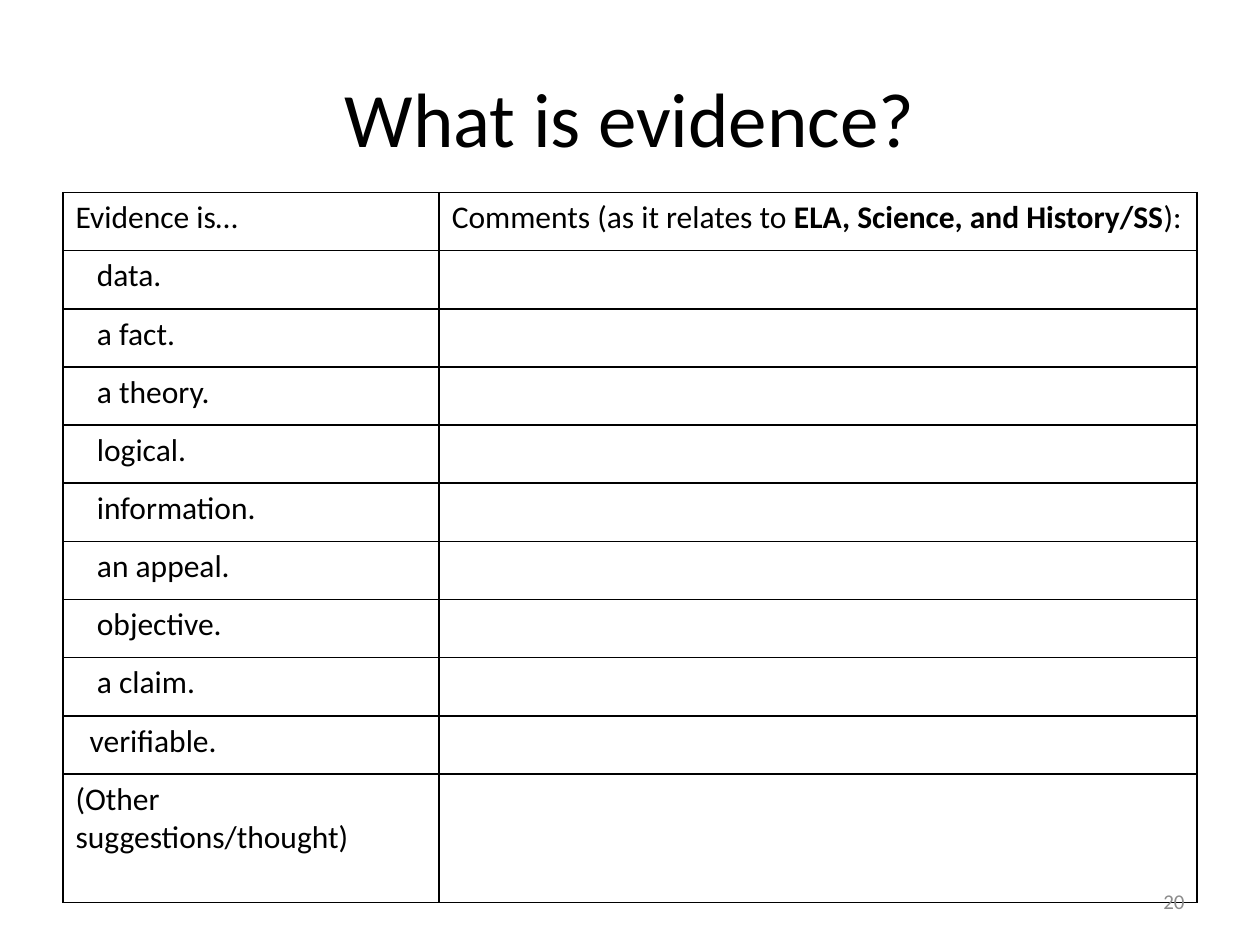
import dataclasses
import lxml.etree
import pptx
import pptx.dml.color
import pptx.enum.text
import pptx.oxml.ns
import pptx.util

Pt = pptx.util.Pt
ALIGN = pptx.enum.text.PP_ALIGN
MIDDLE = pptx.enum.text.MSO_ANCHOR.MIDDLE


@dataclasses.dataclass(frozen=True)
class Theme:
    font: str = "Calibri"
    ink: str = "000000"
    paper: str = "FFFFFF"
    muted: str = "8C8C8C"
    title: int = 44
    body: int = 18
    number: int = 12
    border: int = 1


THEME = Theme()
HEADER = [("Comments (as it relates to ", False),
          ("ELA, Science, and History/SS", True), ("):", False)]
ITEMS = ["data.", "a fact.", "a theory.", "logical.", "information.",
         "an appeal.", "objective.", "a claim.", "verifiable."]
LABELS = ["Evidence is…", *ITEMS, "(Other suggestions/thought)"]
MARGIN, ITEM_INDENT, LAST_INDENT = 7.2, 12.2, 8.1


def rgb(color):
    return pptx.dml.color.RGBColor.from_string(color)


def style(r, size, color=THEME.ink, bold=False):
    r.font.name = THEME.font
    r.font.size = Pt(size)
    r.font.bold = bold
    r.font.color.rgb = rgb(color)


def add_border(cell):
    tcPr = cell._tc.get_or_add_tcPr()
    qn = pptx.oxml.ns.qn
    for i, side in enumerate(("lnL", "lnR", "lnT", "lnB")):
        ln = lxml.etree.Element(qn(f"a:{side}"), w=str(Pt(THEME.border)))
        fill = lxml.etree.SubElement(ln, qn("a:solidFill"))
        lxml.etree.SubElement(fill, qn("a:srgbClr"), val=THEME.ink)
        tcPr.insert(i, ln)


def place_text(sp, box, text, size, color, align):
    sp.left, sp.top, sp.width, sp.height = map(Pt, box)
    tf = sp.text_frame
    tf.text = text
    tf.word_wrap = True
    tf.vertical_anchor = MIDDLE
    p = tf.paragraphs[0]
    p.alignment = align
    style(p.runs[0], size, color)


def evidence_table(s, box, label_width, row_height):
    left, top, width, height = box
    frame = s.shapes.add_table(len(LABELS), 2, *map(Pt, box))
    table = frame.table
    table.first_row = table.horz_banding = False
    table.columns[0].width = Pt(label_width)
    table.columns[1].width = Pt(width - label_width)
    for row in table.rows:
        row.height = Pt(row_height)
    table.rows[len(LABELS) - 1].height = Pt(height - row_height * (len(LABELS) - 1))

    for cell in table.iter_cells():
        cell.fill.solid()
        cell.fill.fore_color.rgb = rgb(THEME.paper)
        add_border(cell)

    for i, label in enumerate(LABELS):
        cell = table.cell(i, 0)
        cell.text = label
        style(cell.text_frame.paragraphs[0].runs[0], THEME.body)
        if label in ITEMS:
            indent = LAST_INDENT if label == ITEMS[-1] else ITEM_INDENT
            cell.margin_left = Pt(MARGIN + indent)

    p = table.cell(0, 1).text_frame.paragraphs[0]
    for text, bold in HEADER:
        r = p.add_run()
        r.text = text
        style(r, THEME.body, bold=bold)


def main():
    prs = pptx.Presentation()
    prs.slide_width, prs.slide_height = Pt(720), Pt(540)
    s = prs.slides.add_slide(prs.slide_layouts[5])
    place_text(s.shapes.title, (36, 21.6, 648, 90), "What is evidence?",
               THEME.title, THEME.ink, ALIGN.CENTER)
    evidence_table(s, (36, 110, 648, 405.7), 215, 33.23)
    number = s.shapes.add_textbox(0, 0, 0, 0)
    place_text(number, (516, 500.5, 168, 28.75), "20",
               THEME.number, THEME.muted, ALIGN.RIGHT)
    prs.save("out.pptx")


if __name__ == "__main__":
    main()
